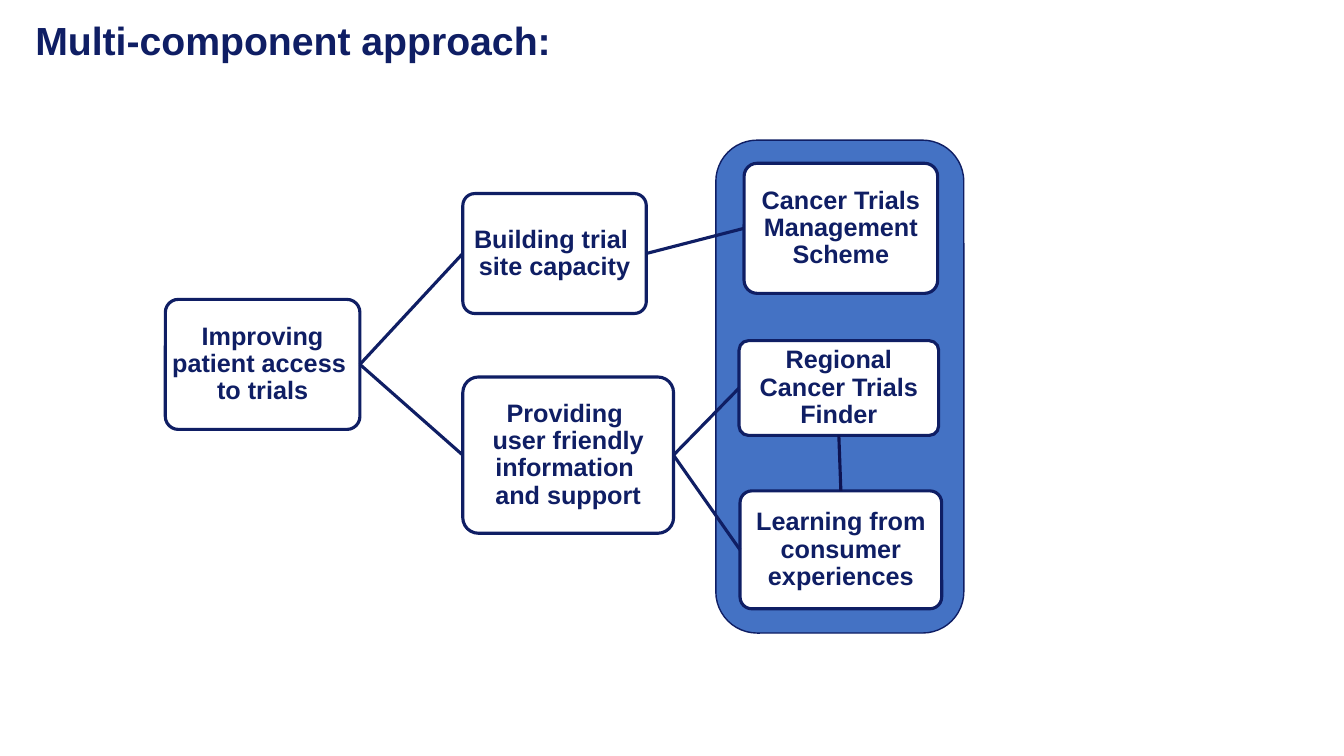
from pptx import Presentation
from pptx.dml.color import RGBColor
from pptx.enum.shapes import MSO_CONNECTOR as Connector, MSO_SHAPE as Shape
from pptx.enum.text import MSO_ANCHOR as Anchor, PP_ALIGN as Align
from pptx.oxml.ns import qn
from pptx.util import Inches, Pt
from lxml import etree

COLOURS = {"navy": "0F1E64", "dark": "0E1351", "blue": "4472C4", "white": "FFFFFF"}
TOP, LEFT, BOTTOM, RIGHT = range(4)


def write_text(shape, text, size=18, align=Align.CENTER, anchor=Anchor.MIDDLE, inset=0.01):
    frame = shape.text_frame
    frame.word_wrap = True
    frame.vertical_anchor = anchor
    frame.margin_left = frame.margin_right = Inches(inset)
    frame.margin_top = frame.margin_bottom = Inches(min(inset, 0.05))
    paragraph = frame.paragraphs[0]
    paragraph.alignment = align
    paragraph.line_spacing = 0.9
    for index, line in enumerate(text.split("\n")):
        if index:
            paragraph.add_line_break()
        run = paragraph.add_run()
        run.text = line
        run.font.name = "Arial"
        run.font.size = Pt(size)
        run.font.bold = True
        run.font.color.rgb = RGBColor.from_string(COLOURS["navy"])


def add_rounded(left, top, width, height, fill=None, line_width=2.25):
    shape = slide.shapes.add_shape(
        Shape.ROUNDED_RECTANGLE, Inches(left), Inches(top), Inches(width), Inches(height))
    shape.shadow.inherit = False
    if fill:
        shape.fill.solid()
        shape.fill.fore_color.rgb = RGBColor.from_string(COLOURS[fill])
    else:
        shape.fill.background()
    shape.line.color.rgb = RGBColor.from_string(COLOURS["navy"])
    shape.line.width = Pt(line_width)
    return shape


presentation = Presentation()
presentation.slide_width = Inches(13.33)
presentation.slide_height = Inches(7.5)
slide = presentation.slides.add_slide(presentation.slide_layouts[5])

title = slide.shapes.title
title.left, title.top, title.width, title.height = (Inches(n) for n in (0.25, 0.16, 12, 1.25))
write_text(title, "Multi-component approach:", size=28, align=Align.LEFT,
           anchor=Anchor.TOP, inset=0.1)

add_rounded(7.1, 1.39, 2.46, 4.89, fill="blue", line_width=1)

boxes = {
    "aim": (1.64, 2.97, 1.93, 1.29, None, "Improving patient access \nto trials"),
    "capacity": (4.59, 1.92, 1.82, 1.19, None, "Building trial \nsite capacity"),
    "support": (4.59, 3.74, 2.09, 1.55, None,
                "Providing \nuser friendly information \nand support"),
    "scheme": (7.38, 1.62, 1.92, 1.29, "white", "Cancer Trials Management Scheme"),
    "link": (7.33, 3.38, 1.98, 0.94, "white", "Regional Cancer Trials Finder"),
    "learning": (7.34, 4.87, 2, 1.17, "white", "Learning from consumer experiences"),
}
shapes = {}
for name, (left, top, width, height, fill, text) in boxes.items():
    shapes[name] = add_rounded(left, top, width, height, fill)
    shapes[name].adjustments[0] = 0.1
    write_text(shapes[name], text)

links = [
    ("aim", RIGHT, "capacity", LEFT, "navy"),
    ("aim", RIGHT, "support", LEFT, "navy"),
    ("capacity", RIGHT, "scheme", LEFT, "navy"),
    ("support", RIGHT, "link", LEFT, "navy"),
    ("support", RIGHT, "learning", LEFT, "navy"),
    ("learning", TOP, "link", BOTTOM, "dark"),
]
for start, start_side, end, end_side, colour in links:
    connector = slide.shapes.add_connector(Connector.STRAIGHT, 0, 0, 0, 0)
    connector.begin_connect(shapes[start], start_side)
    connector.end_connect(shapes[end], end_side)
    connector.line.color.rgb = RGBColor.from_string(COLOURS[colour])
    connector.line.width = Pt(2.25)
    etree.SubElement(connector._element.spPr, qn("a:effectLst"))

presentation.save("out.pptx")
